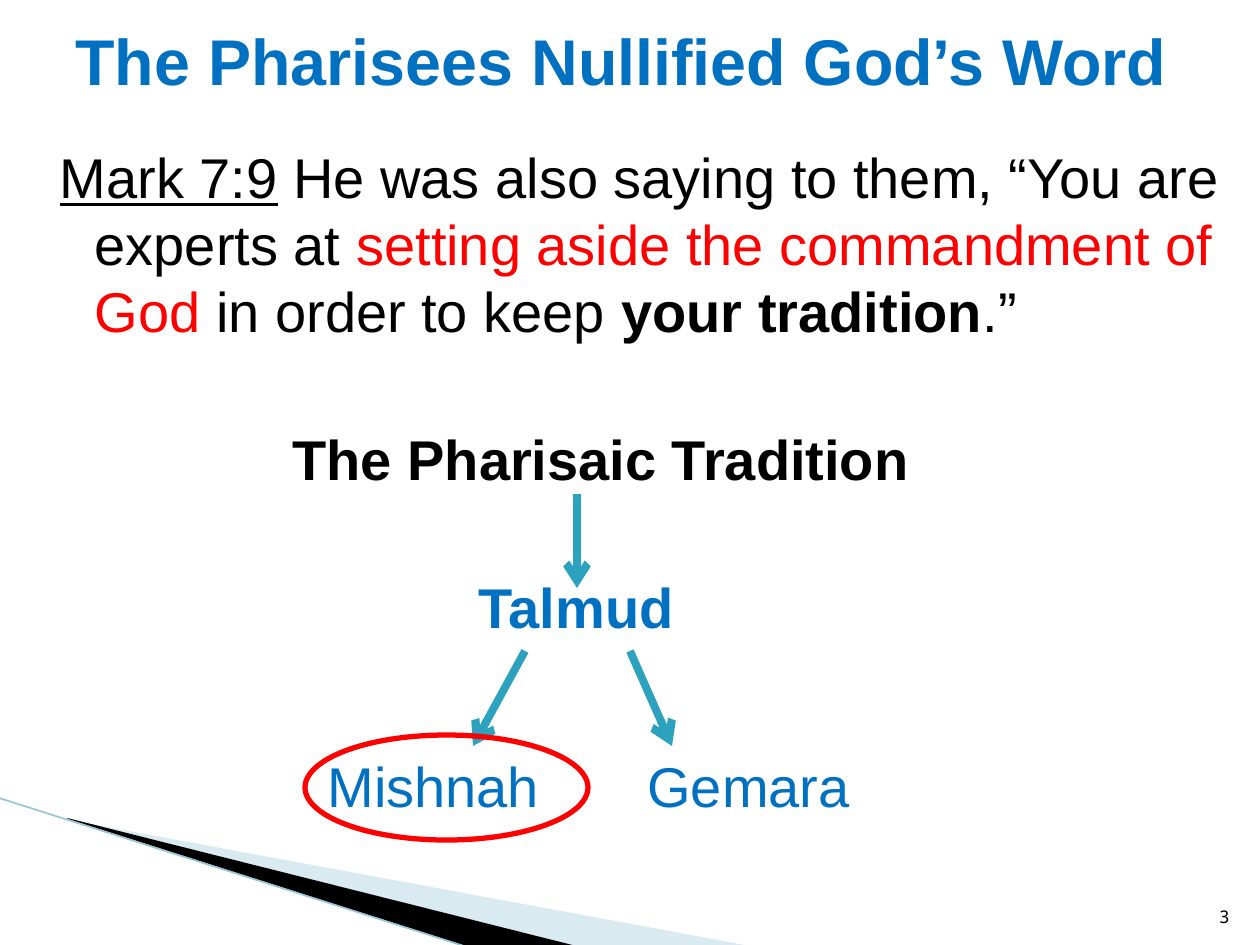
from lxml import etree
from pptx import Presentation
from pptx import util as u
from pptx.dml.color import RGBColor
from pptx.enum import shapes, text
from pptx.oxml import ns

PX = 914400 / 126
COLORS = {"black": "000000", "blue": "0070C0", "red": "FF0000", "teal": "2DA2BF",
          "pale": "A0CBDC", "edge": "97C5D8"}


def px(value):
    return u.Emu(round(value * PX))


def color(name):
    return RGBColor.from_string(COLORS[name])


def add_xml(parent, tag, **attributes):
    return etree.SubElement(parent, ns.qn(tag), attributes)


def place(shape, left, top, width, height):
    shape.left, shape.top = px(left), px(top)
    shape.width, shape.height = px(width), px(height)


def style(font, size, tint, bold=False, underline=False, name="Arial"):
    font.name, font.size = name, u.Pt(size)
    font.bold, font.underline = bold, underline
    font.color.rgb = color(tint)


def add_wedge(slide, points, tint, opacity=100):
    builder = slide.shapes.build_freeform(*points[0], scale=PX)
    builder.add_line_segments(points[1:], close=True)
    wedge = builder.convert_to_shape()
    wedge.shadow.inherit = False
    wedge.fill.solid()
    wedge.fill.fore_color.rgb = color(tint)
    wedge.line.fill.background()
    if opacity < 100:
        fill = wedge.fill._xPr.find(".//" + ns.qn("a:srgbClr"))
        add_xml(fill, "a:alpha", val=str(opacity * 1000))


def add_line(slide, start, end, tint, width, arrow=False):
    line = slide.shapes.add_connector(
        shapes.MSO_CONNECTOR.STRAIGHT, *map(px, start + end))
    line.line.color.rgb = color(tint)
    line.line.width = u.Pt(width)
    if arrow:
        add_xml(line.line._get_or_add_ln(), "a:tailEnd", type="arrow")
    add_xml(line._element.spPr, "a:effectLst")


def add_ring(slide, box, tint, width):
    ring = slide.shapes.add_shape(shapes.MSO_SHAPE.OVAL, *map(px, box))
    ring.shadow.inherit = False
    ring.fill.background()
    ring.line.color.rgb = color(tint)
    ring.line.width = u.Pt(width)


def add_label(slide, box, words, size, tint, font="Arial", tab=None):
    label = slide.shapes.add_textbox(*map(px, box))
    frame = label.text_frame
    frame.word_wrap = True
    paragraph = frame.paragraphs[0]
    paragraph.text = words
    if tab:
        tabs = add_xml(paragraph._p.get_or_add_pPr(), "a:tabLst")
        add_xml(tabs, "a:tab", pos=str(px(tab)), algn="l")
    for run in paragraph.runs:
        style(run.font, size, tint, name=font)
    return frame


def fill_title(title, words):
    place(title, 63, 0, 1134, 120)
    frame = title.text_frame
    frame.text = words
    frame.auto_size = text.MSO_AUTO_SIZE.NONE
    frame.vertical_anchor = text.MSO_ANCHOR.MIDDLE
    frame.paragraphs[0].alignment = text.PP_ALIGN.LEFT
    style(frame.paragraphs[0].runs[0].font, 36.9, "blue", bold=True)


def fill_body(body, lines):
    place(body, 32, 136, 1207, 692)
    frame = body.text_frame
    frame.auto_size = text.MSO_AUTO_SIZE.NONE
    for index, (margin, indent, before, parts) in enumerate(lines):
        paragraph = frame.add_paragraph() if index else frame.paragraphs[0]
        properties = paragraph._p.get_or_add_pPr()
        properties.set("marL", str(px(margin)))
        properties.set("indent", str(px(indent)))
        add_xml(properties, "a:buNone")
        paragraph.line_spacing = 1.0
        paragraph.space_before = u.Pt(before)
        for words, tint, bold, underline in parts:
            run = paragraph.add_run()
            run.text = words
            style(run.font, 32, tint, bold, underline)


def main():
    deck = Presentation()
    deck.slide_width, deck.slide_height = px(1260), px(945)
    slide = deck.slides.add_slide(deck.slide_layouts[1])
    title, body = slide.placeholders

    add_wedge(slide, [(69, 820), (750, 946), (575, 946), (69, 819)], "pale", 40)
    add_wedge(slide, [(67, 818), (576, 946), (469, 947), (68, 819)], "black")
    add_line(slide, (-1, 798), (467, 947), "edge", 0.95)

    fill_title(title, "The Pharisees Nullified God’s Word")
    verse = [
        ("Mark 7:9", "black", False, True),
        (" He was also saying to them, “You are experts at ", "black", False, False),
        ("setting aside the commandment of God ", "red", False, False),
        ("in order to keep ", "black", False, False),
        ("your tradition", "black", True, False),
        (".”", "black", False, False),
    ]
    fill_body(body, [
        (50, -35, 0, verse),
        (248, 0, 46, [("The Pharisaic Tradition", "black", True, False)]),
        (434, 0, 46, [("Talmud", "blue", True, False)]),
    ])

    for start, end in [((577, 494), (577, 588)),
                       ((525, 651), (473, 746)),
                       ((630, 651), (672, 746))]:
        add_line(slide, start, end, "teal", 4.5, arrow=True)

    add_label(slide, (315, 745, 630, 81), "Mishnah\tGemara", 32, "blue", tab=320)
    add_ring(slide, (305, 735, 283, 105), "red", 3)

    number = add_label(slide, (1192, 883, 50, 50), "3", 10, "black", "Noto Sans Mono")
    number.vertical_anchor = text.MSO_ANCHOR.BOTTOM
    number.paragraphs[0].alignment = text.PP_ALIGN.RIGHT

    deck.save("out.pptx")


if __name__ == "__main__":
    main()
